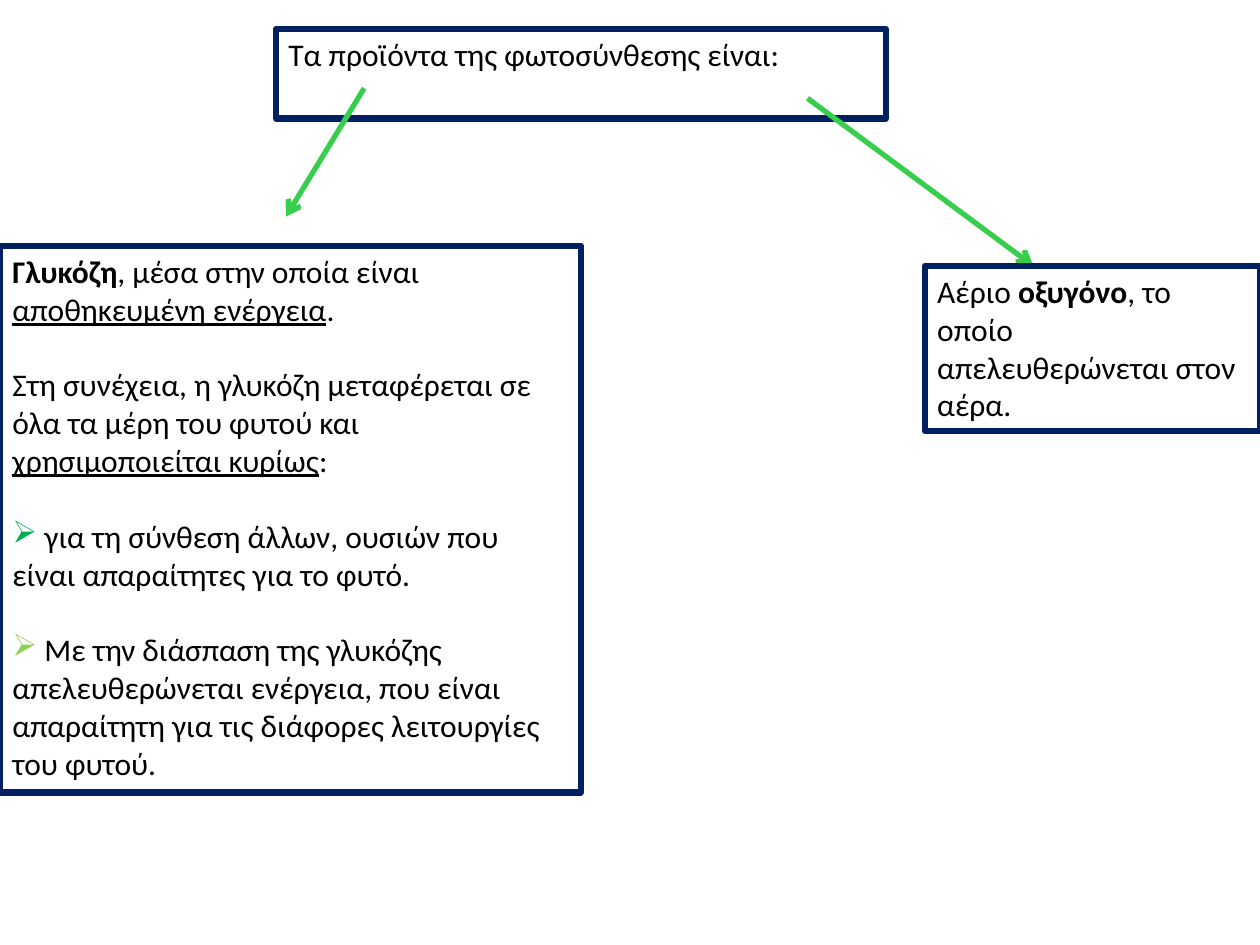
"""Build a slide that shows the two products of photosynthesis."""
from dataclasses import dataclass

from lxml import etree
from pptx import Presentation
from pptx.dml.color import RGBColor
from pptx.enum.shapes import MSO_CONNECTOR, MSO_SHAPE
from pptx.enum.text import MSO_ANCHOR, MSO_AUTO_SIZE, PP_ALIGN
from pptx.oxml.ns import qn
from pptx.util import Pt

RECTANGLE = MSO_SHAPE.RECTANGLE
STRAIGHT = MSO_CONNECTOR.STRAIGHT
TOP, LEFT, NO_AUTOFIT = MSO_ANCHOR.TOP, PP_ALIGN.LEFT, MSO_AUTO_SIZE.NONE
NAVY, GREEN, BLACK = "002060", "38CE4D", "000000"
BORDER_WIDTH, ARROW_WIDTH = 3.5, 3
PARAGRAPH_GAP = 21.7
FRAME_FORMAT = {
    "word_wrap": True,
    "auto_size": NO_AUTOFIT,
    "vertical_anchor": TOP,
    "margin_left": Pt(7.2),
    "margin_right": Pt(9),
    "margin_top": Pt(3.6),
    "margin_bottom": Pt(3.6),
}
FONT_FORMAT = {"name": "Calibri", "size": Pt(18)}


@dataclass(frozen=True)
class Span:
    """A stretch of text with one style."""
    text: str
    bold: bool = False
    underline: bool = False


@dataclass(frozen=True)
class Para:
    """A paragraph with an optional bullet colour."""
    spans: tuple[Span, ...]
    bullet_color: str = ""


@dataclass(frozen=True)
class Box:
    """A bordered text box, measured in points."""
    left: float
    top: float
    width: float
    height: float
    paras: tuple[Para, ...]


@dataclass(frozen=True)
class Arrow:
    """An arrow between two places, measured in points."""
    start: tuple[float, float]
    end: tuple[float, float]


HEADING = Box(157.7, 16.6, 348.5, 51.1, (
    Para((Span("Τα προϊόντα της φωτοσύνθεσης είναι:"),)),
))
ARROWS = (
    Arrow((208.1, 50.4), (163.4, 123.8)),
    Arrow((461.5, 56.2), (590.4, 151.9)),
)
GLUCOSE = Box(0, 140.4, 331.9, 312.5, (
    Para((
        Span("Γλυκόζη", bold=True),
        Span(", μέσα στην οποία είναι "),
        Span("αποθηκευμένη ενέργεια", underline=True),
        Span("."),
    )),
    Para((
        Span("Στη συνέχεια, η γλυκόζη μεταφέρεται σε όλα τα μέρη του φυτού και "),
        Span("χρησιμοποιείται κυρίως", underline=True),
        Span(":"),
    )),
    Para((Span(" για τη σύνθεση άλλων, ουσιών που είναι απαραίτητες για το φυτό."),),
         "00B050"),
    Para((Span(" Με την διάσπαση της γλυκόζης απελευθερώνεται ενέργεια, που είναι "
               "απαραίτητη για τις διάφορες λειτουργίες του φυτού."),), "92D050"),
))
OXYGEN = Box(528.5, 151.9, 191.5, 94.3, (
    Para((
        Span("Αέριο "),
        Span("οξυγόνο", bold=True),
        Span(", το οποίο απελευθερώνεται στον αέρα."),
    )),
))


def color(value: str) -> RGBColor:
    """Turn a hex string into a colour."""
    return RGBColor.from_string(value)


def apply_format(target, values: dict) -> None:
    """Set each named attribute of the target."""
    for name, value in values.items():
        setattr(target, name, value)


def add_bullet(paragraph, value: str) -> None:
    """Give the paragraph a coloured arrowhead bullet."""
    properties = paragraph._p.get_or_add_pPr()
    apply_values = {"marL": "0", "indent": "0"}
    properties.attrib.update(apply_values)
    bullet_color = etree.SubElement(properties, qn("a:buClr"))
    etree.SubElement(bullet_color, qn("a:srgbClr"), val=value)
    etree.SubElement(properties, qn("a:buChar"), char="➢")


def fill_paragraph(paragraph, para: Para) -> None:
    """Write the spans of one paragraph."""
    paragraph.alignment = LEFT
    if para.bullet_color:
        add_bullet(paragraph, para.bullet_color)
    for span in para.spans:
        run = paragraph.add_run()
        run.text = span.text
        apply_format(run.font, FONT_FORMAT | {
            "bold": span.bold, "underline": span.underline})
        run.font.color.rgb = color(BLACK)


def draw_box(page, box: Box) -> None:
    """Draw a bordered box and its text."""
    shape = page.shapes.add_shape(
        RECTANGLE, Pt(box.left), Pt(box.top), Pt(box.width), Pt(box.height))
    shape.shadow.inherit = False
    shape.fill.background()
    shape.line.color.rgb = color(NAVY)
    shape.line.width = Pt(BORDER_WIDTH)
    frame = shape.text_frame
    apply_format(frame, FRAME_FORMAT)
    for index, para in enumerate(box.paras):
        paragraph = frame.add_paragraph() if index else frame.paragraphs[0]
        if index:
            paragraph.space_before = Pt(PARAGRAPH_GAP)
        fill_paragraph(paragraph, para)


def draw_arrow(page, arrow: Arrow) -> None:
    """Draw a straight line with an open arrowhead at its end."""
    connector = page.shapes.add_connector(
        STRAIGHT, *(Pt(value) for value in arrow.start + arrow.end))
    connector.line.color.rgb = color(GREEN)
    connector.line.width = Pt(ARROW_WIDTH)
    etree.SubElement(connector.line._get_or_add_ln(), qn("a:tailEnd"), type="arrow")
    etree.SubElement(connector._element.spPr, qn("a:effectLst"))


def main() -> None:
    """Build and save the deck."""
    deck = Presentation()
    deck.slide_width, deck.slide_height = Pt(720), Pt(540)
    page = deck.slides.add_slide(deck.slide_layouts[6])
    draw_box(page, HEADING)
    for arrow in ARROWS:
        draw_arrow(page, arrow)
    for box in (GLUCOSE, OXYGEN):
        draw_box(page, box)
    deck.save("out.pptx")


if __name__ == "__main__":
    main()
